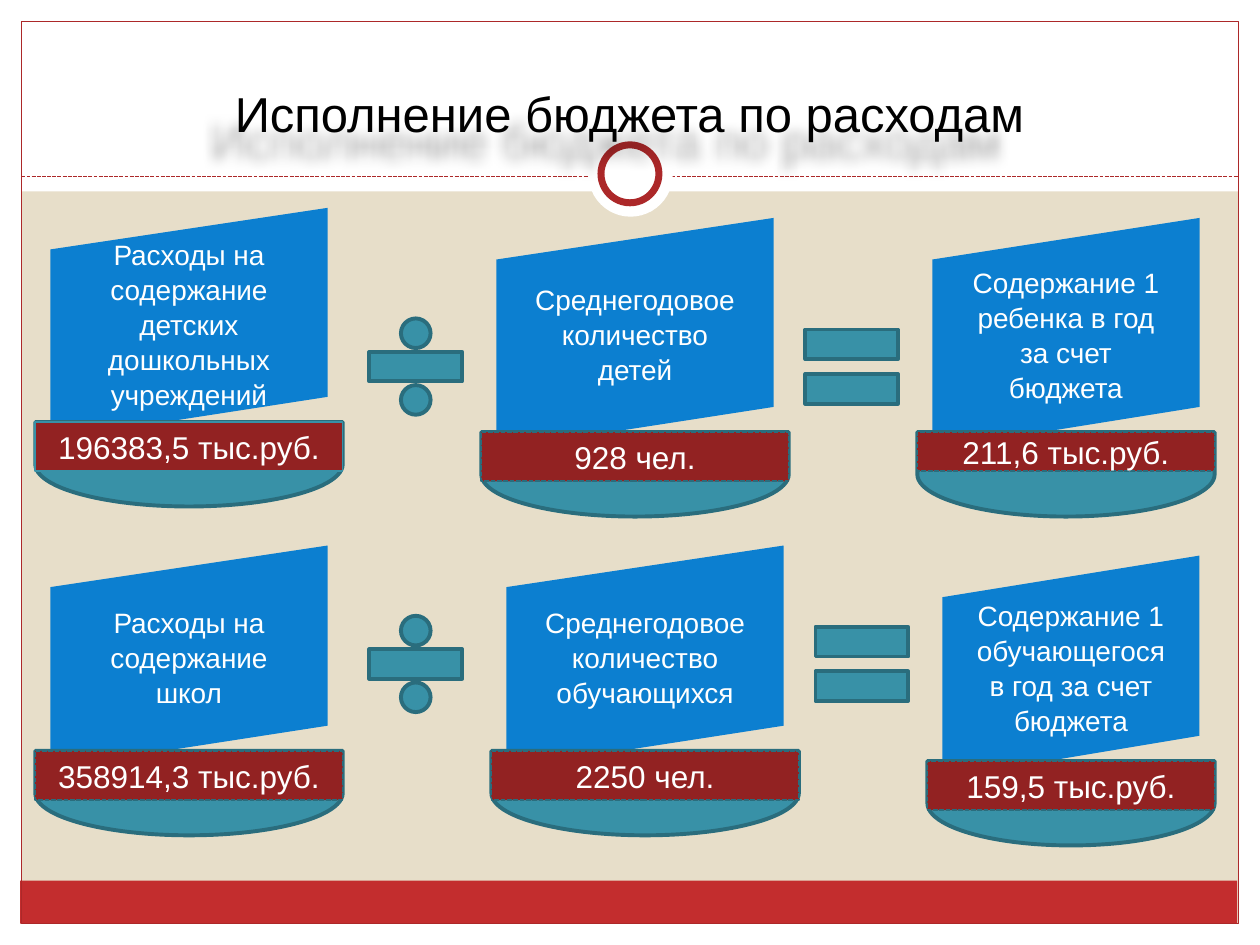
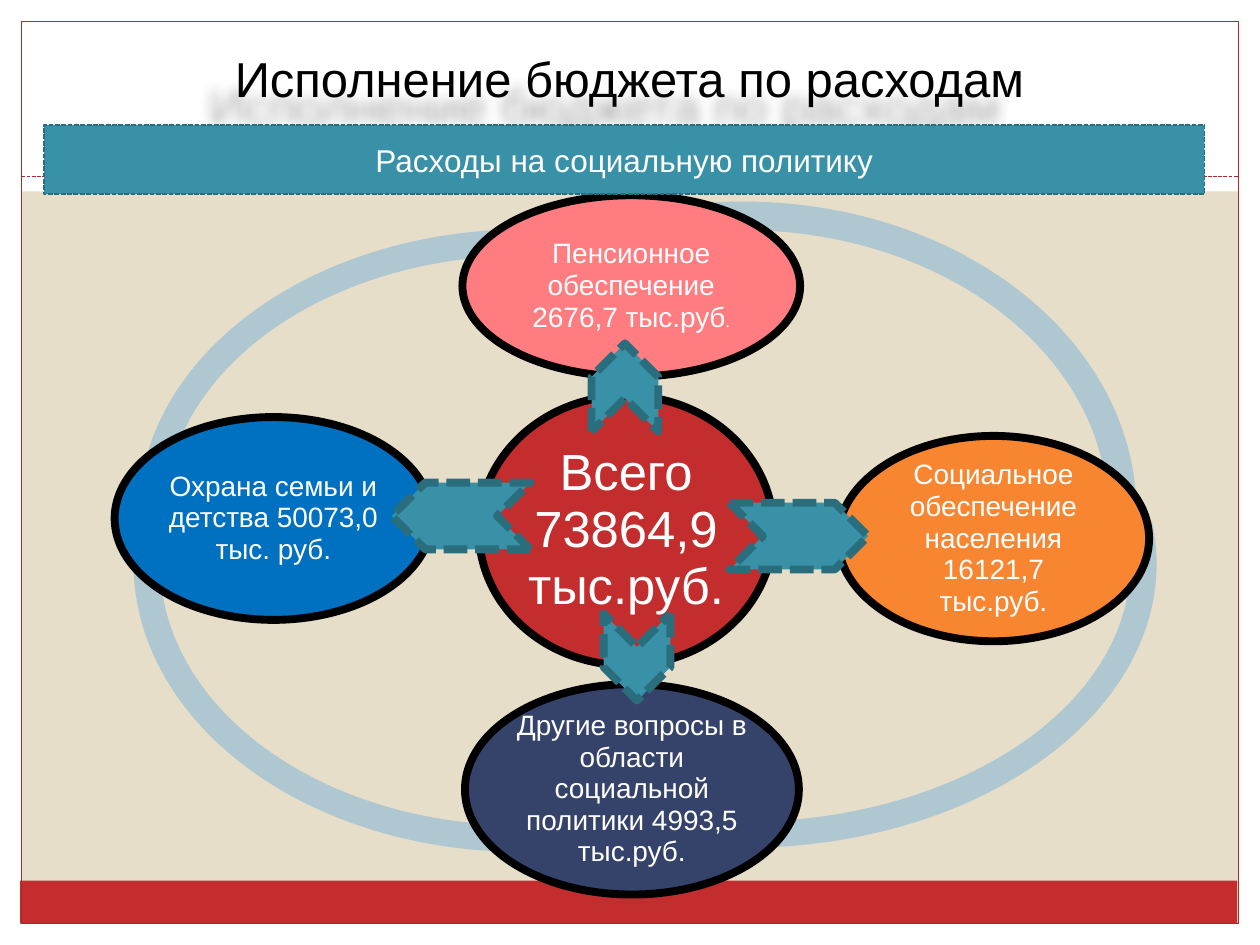
from lxml import etree
from pptx import Presentation
from pptx.dml.color import RGBColor
from pptx.enum.dml import MSO_LINE
from pptx.enum.shapes import MSO_CONNECTOR, MSO_SHAPE as SHAPE
from pptx.enum.text import MSO_ANCHOR, PP_ALIGN
from pptx.oxml import parse_xml
from pptx.oxml.ns import nsdecls, qn
from pptx.util import Inches, Pt

WHITE = RGBColor(0xFF, 0xFF, 0xFF)
BLACK = RGBColor(0, 0, 0)
SAND = RGBColor(0xE7, 0xDE, 0xC9)
RED = RGBColor(0xC3, 0x2D, 0x2E)
FRAME_RED = RGBColor(0xAC, 0x28, 0x29)
DARK_RED = RGBColor(0x92, 0x22, 0x22)
PANEL_BLUE = RGBColor(0x0C, 0x7F, 0xD0)
BLUE = RGBColor(0x00, 0x70, 0xC0)
TEAL = RGBColor(0x38, 0x91, 0xA7)
DARK_TEAL = RGBColor(0x2A, 0x6D, 0x7D)
PINK = RGBColor(0xFF, 0x7C, 0x80)
ORANGE = RGBColor(0xF8, 0x86, 0x31)
NAVY = RGBColor(0x35, 0x43, 0x6A)
PALE_BLUE = RGBColor(0xAF, 0xC7, 0xD0)
DASH = MSO_LINE.SQUARE_DOT

TITLE = "Исполнение бюджета по расходам"
TITLE_SHADOW = (
    f'<a:effectLst {nsdecls("a")}><a:outerShdw blurRad="90000" dist="260000" dir="8100000" '
    'algn="tl" rotWithShape="0"><a:srgbClr val="000000"><a:alpha val="35000"/></a:srgbClr>'
    "</a:outerShdw></a:effectLst>"
)


def add_shape(slide, kind, box, fill=None, line=None, width=0.75, dash=None, rotation=0):
    shape = slide.shapes.add_shape(kind, *[Inches(value) for value in box])
    shape.shadow.inherit = False
    shape.rotation = rotation
    if fill is None:
        shape.fill.background()
    else:
        shape.fill.solid()
        shape.fill.fore_color.rgb = fill
    if line is None:
        shape.line.fill.background()
    else:
        shape.line.color.rgb = line
        shape.line.width = Pt(width)
        shape.line.dash_style = dash
    return shape


def write(shape, text, size=18, color=WHITE, font="Arial", side=0.1, edge=0.05, spacing=1.0):
    """Add a centred run of text to the shape's first paragraph."""
    frame = shape.text_frame
    frame.word_wrap = True
    frame.vertical_anchor = MSO_ANCHOR.MIDDLE
    frame.margin_left = frame.margin_right = Inches(side)
    frame.margin_top = frame.margin_bottom = Inches(edge)
    paragraph = frame.paragraphs[0]
    paragraph.alignment = PP_ALIGN.CENTER
    paragraph.line_spacing = spacing
    run = paragraph.add_run()
    run.text = text
    run.font.size = Pt(size)
    run.font.name = font
    run.font.color.rgb = color


presentation = Presentation()
presentation.slide_width = Inches(10)
presentation.slide_height = Inches(7.5)

# Shared background, frame and title
slides = []
for title_height in (1.3, 0.74):
    slide = presentation.slides.add_slide(presentation.slide_layouts[6])
    slides.append(slide)
    slide.background.fill.solid()
    slide.background.fill.fore_color.rgb = SAND
    for margin in ((0, 7.33, 10, 0.17), (0, 0, 10, 1.52), (0, 0, 0.17, 7.5), (9.83, 0, 0.17, 7.5)):
        add_shape(slide, SHAPE.RECTANGLE, margin, WHITE)
    add_shape(slide, SHAPE.RECTANGLE, (0.16, 6.99, 9.66, 0.34), RED)
    add_shape(slide, SHAPE.RECTANGLE, (0.17, 0.17, 9.66, 7.16), line=FRAME_RED)
    divider = slide.shapes.add_connector(
        MSO_CONNECTOR.STRAIGHT, Inches(0.17), Inches(1.4), Inches(9.83), Inches(1.4))
    divider.line.color.rgb = FRAME_RED
    divider.line.width = Pt(0.75)
    divider.line.dash_style = DASH
    etree.SubElement(divider._element.spPr, qn("a:effectLst"))
    add_shape(slide, SHAPE.OVAL, (4.67, 1.05, 0.67, 0.67), WHITE)
    add_shape(slide, SHAPE.OVAL, (4.77, 1.15, 0.46, 0.46), WHITE, FRAME_RED, 4)
    title = slide.shapes.add_textbox(Inches(0.33), Inches(0.25), Inches(9.33), Inches(title_height))
    write(title, TITLE, size=28, color=BLACK)
    title._element.spPr.append(parse_xml(TITLE_SHADOW))

cost_slide, social_slide = slides

# Slide 1: cost divided by headcount gives cost per child
for kind, left, top in (
    (SHAPE.MATH_DIVIDE, 2.8, 2.41), (SHAPE.MATH_EQUAL, 6.26, 2.41),
    (SHAPE.MATH_DIVIDE, 2.8, 4.77), (SHAPE.MATH_EQUAL, 6.34, 4.77),
):
    add_shape(cost_slide, kind, (left, top, 1, 1), TEAL, DARK_TEAL, 2.25)

# left, top, width, height, plate height, plate line, plate dash, label, amount
panels = [
    (0.28, 1.78, 2.44, 1.57, 0.39, TEAL, None,
     "Расходы на содержание детских дошкольных учреждений", "196383,5 тыс.руб."),
    (3.82, 1.86, 2.44, 1.57, 0.39, DARK_TEAL, DASH,
     "Среднегодовое количество детей", "928 чел."),
    (7.28, 1.86, 2.36, 1.57, 0.31, DARK_TEAL, DASH,
     "Содержание 1 ребенка в год за счет бюджета", "211,6 тыс.руб."),
    (0.28, 4.46, 2.44, 1.5, 0.39, DARK_TEAL, DASH,
     "Расходы на содержание школ", "358914,3 тыс.руб."),
    (3.9, 4.46, 2.44, 1.5, 0.39, DARK_TEAL, DASH,
     "Среднегодовое количество обучающихся", "2250 чел."),
    (7.36, 4.54, 2.28, 1.5, 0.39, DARK_TEAL, DASH,
     "Содержание 1 обучающегося в год за счет бюджета", "159,5 тыс.руб."),
]
BOWL_DEPTH = 0.67
for left, top, width, height, plate_height, plate_line, plate_dash, label, amount in panels:
    near, far, bottom = left + 0.12, left + width - 0.12, top + height
    corners = [(near, top + 0.2), (far, top - 0.13), (far, bottom - 0.2), (near, bottom + 0.14)]
    points = [(Inches(x), Inches(y)) for x, y in corners]
    builder = cost_slide.shapes.build_freeform(*points[0])
    builder.add_line_segments(points[1:], close=True)
    panel = builder.convert_to_shape()
    panel.shadow.inherit = False
    panel.fill.solid()
    panel.fill.fore_color.rgb = PANEL_BLUE
    panel.line.fill.background()
    write(panel, label, size=16, side=width / 8 - 0.02, spacing=1.04)

    bowl_left = left + (width - BOWL_DEPTH) / 2
    bowl_top = bottom + (BOWL_DEPTH - width) / 2
    add_shape(cost_slide, SHAPE.FLOWCHART_DELAY, (bowl_left, bowl_top, BOWL_DEPTH, width),
              TEAL, DARK_TEAL, 2.25, rotation=90)
    plate = add_shape(cost_slide, SHAPE.RECTANGLE, (left, bottom, width, plate_height),
                      DARK_RED, plate_line, 0.9, plate_dash)
    write(plate, amount)

# Slide 2: ring of social spending around the total
for box, start, end in (
    ((1.1, 1.82, 6.12, 4.52), 107.32, 177.19),
    ((1.06, 2.18, 6.13, 4.58), 38.19, 114.23),
    ((2.62, 2.22, 6.56, 4.51), 212.48, 69.89),
    ((2.78, 1.6, 6.24, 4.92), 146.09, 3.71),
):
    arc = add_shape(social_slide, SHAPE.BLOCK_ARC, box, PALE_BLUE)
    for index, value in enumerate((start, end, 0.046)):
        arc.adjustments[index] = value

for box, fill, size, label in (
    ((3.8, 3.14, 2.34, 2.14), RED, 29, "Всего 73864,9 тыс.руб."),
    ((3.67, 1.55, 2.68, 1.44), PINK, 16, "Пенсионное обеспечение 2676,7 тыс.руб"),
    ((6.65, 3.46, 2.47, 1.63), ORANGE, 16, "Социальное обеспечение населения 16121,7 тыс.руб."),
    ((3.69, 5.43, 2.65, 1.67), NAVY, 16,
     "Другие вопросы в области социальной политики 4993,5 тыс.руб."),
    ((0.91, 3.31, 2.52, 1.61), BLUE, 16, "Охрана семьи и детства 50073,0 тыс. руб."),
):
    oval = add_shape(social_slide, SHAPE.OVAL, box, fill, BLACK, 4.5)
    oval_format = dict(side=0.02, edge=0.02, spacing=0.94)
    write(oval, label, size=size, **oval_format)
    if fill == PINK:
        write(oval, ".", size=9, font="TeX Gyre Schola", **oval_format)

heading = add_shape(social_slide, SHAPE.RECTANGLE, (0.35, 0.99, 9.21, 0.55), TEAL, DARK_TEAL, 0.9, DASH)
write(heading, "Расходы на социальную политику")

for left, top, length, rotation in (
    (4.61, 2.81, 0.7, 270), (5.79, 3.99, 1.1, 0), (4.71, 4.95, 0.69, 90), (3.11, 3.83, 1.1, 180),
):
    add_shape(social_slide, SHAPE.CHEVRON, (left, top, length, 0.53), TEAL, DARK_TEAL, 4.5, DASH, rotation)

presentation.save("out.pptx")
